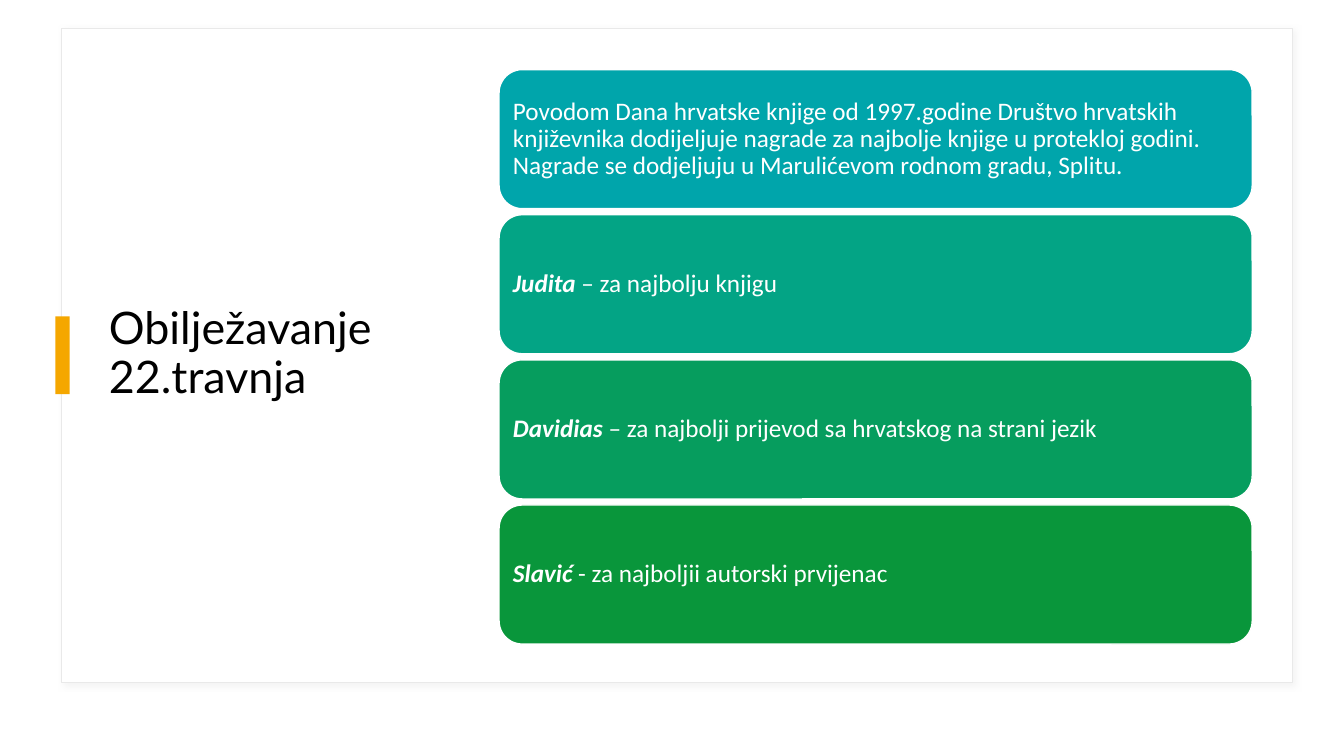
from lxml import etree
from pptx import Presentation
from pptx.dml.color import RGBColor
from pptx.enum.shapes import MSO_SHAPE
from pptx.enum.text import MSO_ANCHOR, MSO_AUTO_SIZE, PP_ALIGN
from pptx.oxml.ns import qn
from pptx.util import Inches, Pt

RECTANGLE = MSO_SHAPE.RECTANGLE
ROUNDED = MSO_SHAPE.ROUNDED_RECTANGLE
MIDDLE = MSO_ANCHOR.MIDDLE
LEFT = PP_ALIGN.LEFT
NO_AUTOFIT = MSO_AUTO_SIZE.NONE
TITLE_ONLY = 5

CARD_TOP, CARD_HEIGHT, CARD_PITCH = 0.69, 1.38, 1.44
CARDS = [
    ("00A5AB", "", "Povodom Dana hrvatske knjige od 1997.godine Društvo hrvatskih "
     "književnika dodijeljuje nagrade za najbolje knjige u protekloj godini. "
     "Nagrade se dodjeljuju u Marulićevom rodnom gradu, Splitu."),
    ("03A485", "Judita", " – za najbolju knjigu"),
    ("069D5E", "Davidias", " – za najbolji prijevod sa hrvatskog na strani jezik"),
    ("09963B", "Slavić", " - za najboljii autorski prvijenac"),
]


def color(value):
    return RGBColor.from_string(value)


def set_all(target, values):
    for name, value in values.items():
        setattr(target, name, value)


def add_box(slide, kind, bounds, fill, line=None):
    box = slide.shapes.add_shape(kind, *(Inches(length) for length in bounds))
    box.shadow.inherit = False
    box.fill.solid()
    box.fill.fore_color.rgb = color(fill)
    if line:
        box.line.color.rgb = color(line)
        box.line.width = Pt(1)
    else:
        box.line.fill.background()
    return box


def add_soft_shadow(box):
    effects = box._element.spPr.find(qn("a:effectLst"))
    shadow = etree.SubElement(effects, qn("a:outerShdw"), blurRad=str(Pt(4)),
                              dist=str(Pt(3)), dir="2700000", algn="tl", rotWithShape="0")
    tint = etree.SubElement(shadow, qn("a:srgbClr"), val="D9D9D9")
    etree.SubElement(tint, qn("a:alpha"), val="30000")


def add_span(para, text, font, size, ink, strong=False):
    span = para.add_run()
    span.text = text
    set_all(span.font, {"name": font, "size": Pt(size), "bold": strong, "italic": strong})
    span.font.color.rgb = color(ink)


def prepare_text(box, margins):
    frame = box.text_frame
    set_all(frame, {"word_wrap": True, "auto_size": NO_AUTOFIT, "vertical_anchor": MIDDLE})
    set_all(frame, margins)
    para = frame.paragraphs[0]
    set_all(para, {"alignment": LEFT, "line_spacing": 0.9, "space_before": Pt(0)})
    return para


def add_title(slide):
    title = slide.shapes.title
    set_all(title, {"left": Inches(0.98), "top": Inches(0.55),
                    "width": Inches(3.66), "height": Inches(5.93)})
    para = prepare_text(title, {"margin_left": Inches(0.1), "margin_right": Inches(0.1)})
    add_span(para, "Obilježavanje 22.travnja", "Lato", 32, "000000")
    # Bring the title in front of the frame
    slide.shapes._spTree.append(title._element)


def add_card(slide, index, fill, award, text):
    top = CARD_TOP + index * CARD_PITCH
    card = add_box(slide, ROUNDED, (4.95, top, 7.47, CARD_HEIGHT), fill, "FFFFFF")
    sides = ("left", "top", "right", "bottom")
    para = prepare_text(card, {f"margin_{side}": Inches(0.07) for side in sides})
    if award:
        add_span(para, award, "Calibri", 18, "FFFFFF", strong=True)
    add_span(para, text, "Calibri", 18, "FFFFFF")


def main():
    deck = Presentation()
    deck.slide_width, deck.slide_height = Inches(13.33), Inches(7.5)
    slide = deck.slides.add_slide(deck.slide_layouts[TITLE_ONLY])

    # Frame with a soft shadow
    frame = add_box(slide, RECTANGLE, (0.61, 0.28, 12.21, 6.49), "FFFFFF", "E9E9E9")
    add_soft_shadow(frame)

    # Title and its accent bar
    add_title(slide)
    add_box(slide, RECTANGLE, (0.55, 3.14, 0.14, 0.77), "F5A700")

    # Award cards
    for index, (fill, award, text) in enumerate(CARDS):
        add_card(slide, index, fill, award, text)

    deck.save("out.pptx")


if __name__ == "__main__":
    main()
